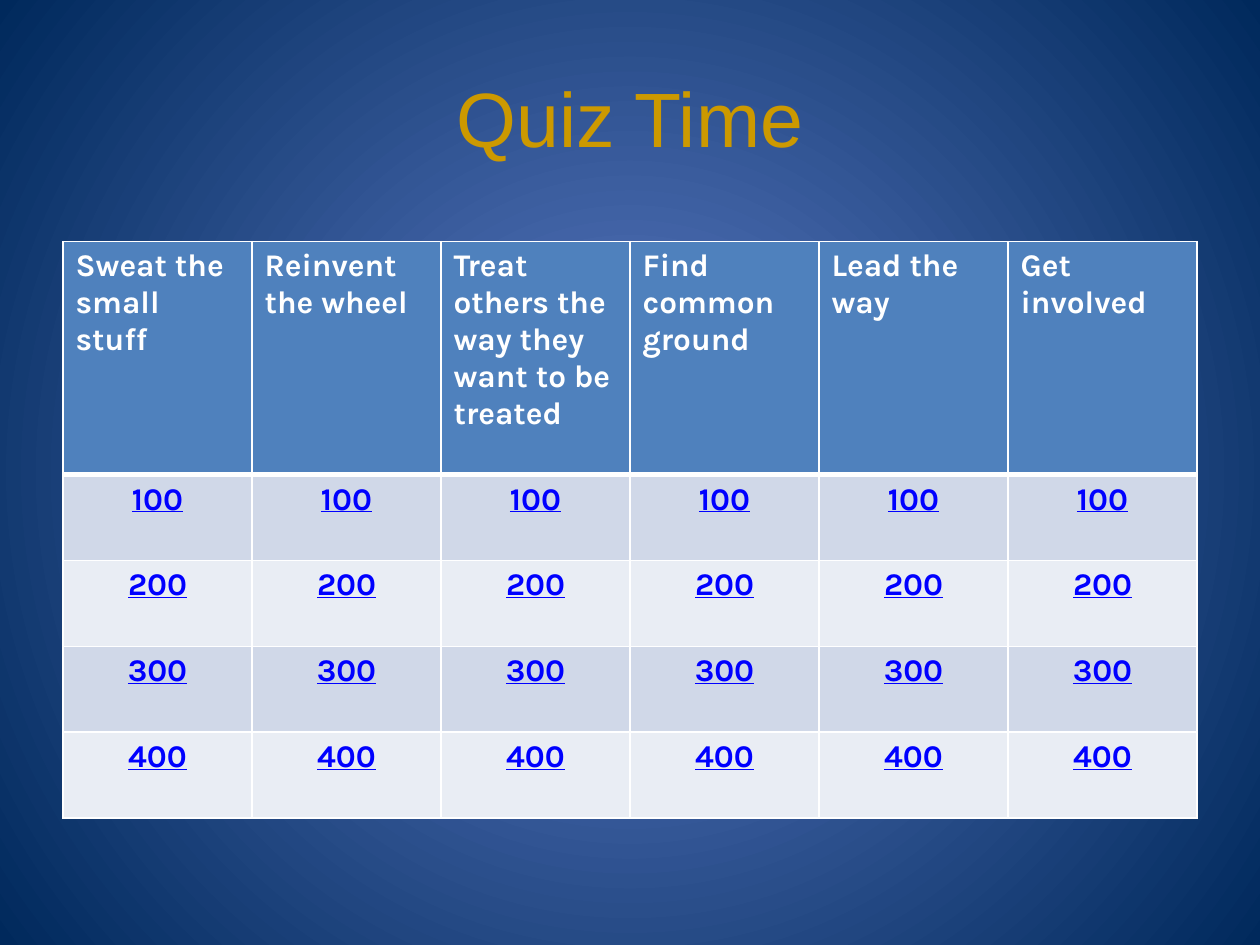
from dataclasses import dataclass

from lxml.etree import SubElement
from pptx import Presentation
from pptx.dml.color import RGBColor
from pptx.enum.text import MSO_ANCHOR, PP_ALIGN
from pptx.oxml.ns import qn
from pptx.util import Cm, Pt


@dataclass(frozen=True)
class Theme:
    glow: str = "5E7CC5"
    edge: str = "00295C"
    title: str = "CC9900"
    header: str = "4F81BD"
    bands: tuple = ("D0D8E8", "E9EDF4")
    points: str = "0000FF"
    white: str = "FFFFFF"
    title_font: str = "Arial"
    board_font: str = "Karla"
    title_size: int = 44
    board_size: int = 18
    thin: int = 1
    thick: int = 3


CATEGORIES = [
    "Sweat the small stuff",
    "Reinvent the wheel",
    "Treat others the way they want to be treated",
    "Find common ground",
    "Lead the way",
    "Get involved",
]
POINTS = [100, 200, 300, 400]


def write(frame, text, *, font, size, color, bold=False, underline=False,
          align=PP_ALIGN.LEFT):
    para = frame.paragraphs[0]
    para.alignment = align
    span = para.add_run()
    span.text = text
    span.font.name = font
    span.font.size = Pt(size)
    span.font.bold = bold
    span.font.underline = underline
    span.font.color.rgb = RGBColor.from_string(color)


def set_border(cell, side, width, color):
    """Draw one cell edge; call before the cell gets its fill."""
    properties = cell._tc.get_or_add_tcPr()
    line = SubElement(properties, qn(f"a:ln{side}"), w=str(Pt(width)))
    fill = SubElement(line, qn("a:solidFill"))
    SubElement(fill, qn("a:srgbClr"), val=color)


class SlideBuilder:
    def __init__(self, slide, theme):
        self.slide = slide
        self.theme = theme

    def background(self):
        """Fill the slide with a glow that darkens outwards from the centre."""
        fill = self.slide.background.fill
        fill.gradient()
        colors = (self.theme.glow, self.theme.edge)
        for stop, position, color in zip(fill.gradient_stops, (0, 1), colors):
            stop.position = position
            stop.color.rgb = RGBColor.from_string(color)
        gradient = self.slide.element.find(f".//{qn('a:gradFill')}")
        linear = gradient.find(qn("a:lin"))
        circle = SubElement(gradient, qn("a:path"), path="circle")
        SubElement(circle, qn("a:fillToRect"),
                   l="50000", t="50000", r="50000", b="50000")
        gradient.replace(linear, circle)

    def title(self, text, left, top, width, height):
        box = self.slide.shapes.add_textbox(left, top, width, height)
        frame = box.text_frame
        frame.word_wrap = True
        frame.vertical_anchor = MSO_ANCHOR.MIDDLE
        write(frame, text, font=self.theme.title_font, size=self.theme.title_size,
              color=self.theme.title, align=PP_ALIGN.CENTER)

    def cell(self, cell, text, fill, *, top=None, bottom=None, **text_format):
        theme = self.theme
        widths = {"L": theme.thin, "R": theme.thin,
                  "T": top or theme.thin, "B": bottom or theme.thin}
        for side, width in widths.items():
            set_border(cell, side, width, theme.white)
        cell.fill.solid()
        cell.fill.fore_color.rgb = RGBColor.from_string(fill)
        write(cell.text_frame, text, font=theme.board_font,
              size=theme.board_size, bold=True, **text_format)

    def board(self, left, top, width, header_height, row_height):
        theme = self.theme
        height = header_height + row_height * len(POINTS)
        table = self.slide.shapes.add_table(
            len(POINTS) + 1, len(CATEGORIES), left, top, width, height).table
        for row in table.rows:
            row.height = row_height
        table.rows[0].height = header_height
        for column, category in enumerate(CATEGORIES):
            self.cell(table.cell(0, column), category, theme.header,
                      bottom=theme.thick, color=theme.white)
            for row, points in enumerate(POINTS, start=1):
                self.cell(table.cell(row, column), str(points),
                          theme.bands[(row - 1) % 2],
                          top=theme.thick if row == 1 else theme.thin,
                          color=theme.points, underline=True,
                          align=PP_ALIGN.CENTER)


def main():
    deck = Presentation()
    deck.slide_width, deck.slide_height = Cm(25.4), Cm(19.05)
    page = SlideBuilder(deck.slides.add_slide(deck.slide_layouts[6]), Theme())
    margin, width = Cm(1.27), Cm(22.86)
    page.background()
    page.title("Quiz Time", margin, Cm(0.76), width, Cm(3.18))
    page.board(margin, Cm(4.87), width, Cm(4.7), Cm(1.73))
    deck.save("out.pptx")


if __name__ == "__main__":
    main()
